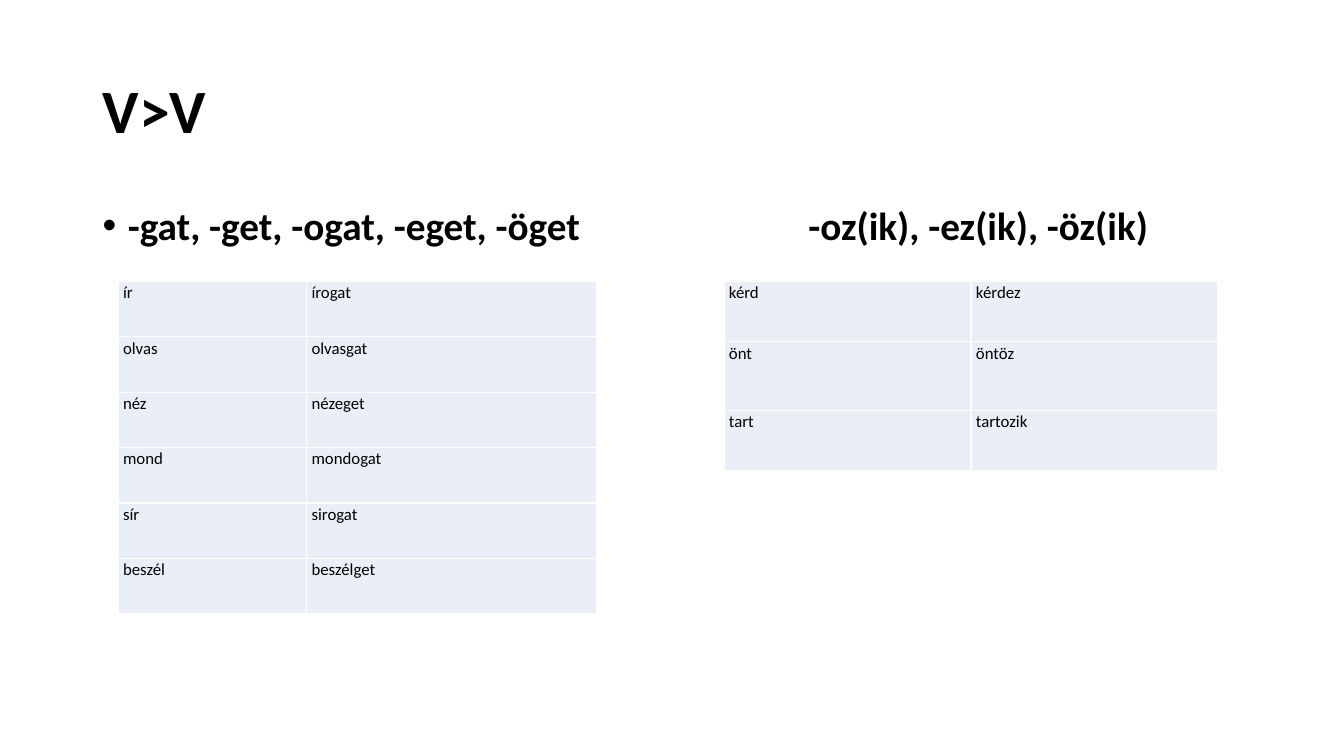
from lxml import etree
from pptx import Presentation
from pptx.dml.color import RGBColor
from pptx.enum.text import MSO_ANCHOR
from pptx.oxml.ns import qn
from pptx.util import Inches, Pt

MIDDLE = MSO_ANCHOR.MIDDLE
TOP = MSO_ANCHOR.TOP
FONT = "Calibri"
BLACK, WHITE, PALE_BLUE = "000000", "FFFFFF", "EAEFF7"

FREQUENTATIVE_VERBS = [
    ("ír", "írogat"),
    ("olvas", "olvasgat"),
    ("néz", "nézeget"),
    ("mond", "mondogat"),
    ("sír", "sirogat"),
    ("beszél", "beszélget"),
]
OTHER_VERBS = [("kérd", "kérdez"), ("önt", "öntöz"), ("tart", "tartozik")]


def color(hex_string):
    return RGBColor.from_string(hex_string)


def style_paragraph(para, size, line_spacing, bold=False):
    para.line_spacing = line_spacing
    para.font.name = FONT
    para.font.size = Pt(size)
    para.font.bold = bold
    para.font.color.rgb = color(BLACK)


def add_bullet_and_tab(para, indent, tab_position):
    """Give the paragraph a hanging bullet and one left tab stop."""
    properties = para._p.get_or_add_pPr()
    properties.set("marL", str(Inches(indent)))
    properties.set("indent", str(Inches(-indent)))
    etree.SubElement(properties, qn("a:buFont"), typeface="Arial")
    etree.SubElement(properties, qn("a:buChar"), char="•")
    tabs = etree.SubElement(properties, qn("a:tabLst"))
    etree.SubElement(tabs, qn("a:tab"), pos=str(Inches(tab_position)), algn="l")


def add_text(page, text, left, top, width, height, anchor):
    box = page.shapes.add_textbox(
        Inches(left), Inches(top), Inches(width), Inches(height))
    frame = box.text_frame
    frame.word_wrap = True
    frame.vertical_anchor = anchor
    para = frame.paragraphs[0]
    para.text = text
    return para


def add_borders(cell, hex_string, width):
    properties = cell._tc.get_or_add_tcPr()
    for side in ("lnL", "lnR", "lnT", "lnB"):
        line = etree.SubElement(properties, qn(f"a:{side}"), w=str(Pt(width)))
        fill = etree.SubElement(line, qn("a:solidFill"))
        etree.SubElement(fill, qn("a:srgbClr"), val=hex_string)


def fill_cell(cell, text):
    cell.margin_left = cell.margin_right = Inches(0.05)
    cell.margin_top = cell.margin_bottom = 0
    add_borders(cell, WHITE, 1)
    cell.fill.solid()
    cell.fill.fore_color.rgb = color(PALE_BLUE)
    para = cell.text_frame.paragraphs[0]
    para.text = text
    style_paragraph(para, 12, 1.07)


def add_verb_table(page, verbs, left, top, column_widths, row_heights):
    table = page.shapes.add_table(
        len(verbs), len(column_widths), Inches(left), Inches(top),
        Inches(sum(column_widths)), Inches(sum(row_heights))).table
    table.first_row = table.horz_banding = False
    for column, width in zip(table.columns, column_widths):
        column.width = Inches(width)
    for row, height, words in zip(table.rows, row_heights, verbs):
        row.height = Inches(height)
        for cell, word in zip(row.cells, words):
            fill_cell(cell, word)


def main():
    deck = Presentation()
    deck.slide_width, deck.slide_height = Inches(13.33), Inches(7.5)
    page = deck.slides.add_slide(deck.slide_layouts[6])

    title = add_text(page, "V>V", 0.92, 0.4, 11.5, 1.45, MIDDLE)
    style_paragraph(title, 44, 0.9, bold=True)

    suffixes = add_text(
        page, "-gat, -get, -ogat, -eget, -öget\t-oz(ik), -ez(ik), -öz(ik)",
        0.92, 2, 11.5, 4.76, TOP)
    add_bullet_and_tab(suffixes, 0.25, 7)
    style_paragraph(suffixes, 28, 0.9, bold=True)

    add_verb_table(page, FREQUENTATIVE_VERBS, 1.17, 2.79, [1.87, 2.88], [0.55] * 6)
    add_verb_table(page, OTHER_VERBS, 7.18, 2.79, [2.45, 2.45], [0.6, 0.68, 0.6])

    deck.save("out.pptx")


if __name__ == "__main__":
    main()
